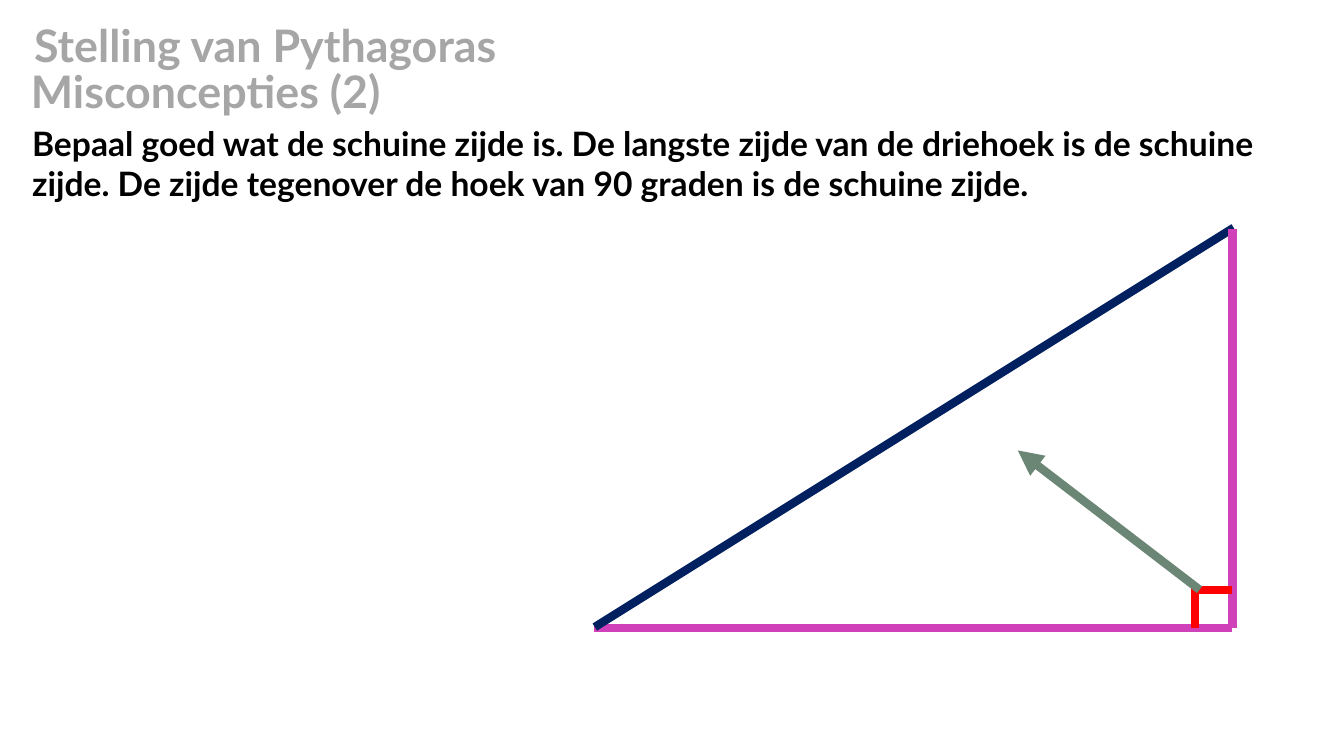
from lxml import etree
from pptx import Presentation
from pptx import util as u
from pptx.dml.color import RGBColor
from pptx.enum import shapes, text
from pptx.oxml.ns import qn

THEME = {
    "font": "Lato",
    "title_size": 32,
    "body_size": 24,
    "line_width": 6,
    "title": "A6A6A6",
    "body": "000000",
    "leg": "D040B9",
    "hypotenuse": "002060",
    "right_angle": "FF0000",
    "pointer": "6B8674",
}

TITLES = [
    ("Stelling van Pythagoras", (0.61, 0.33, 17.98, 1.63)),
    ("Misconcepties (2)", (0.53, 1.47, 17.98, 1.63)),
]
EXPLANATION = (
    "Bepaal goed wat de schuine zijde is. De langste zijde van de driehoek is de schuine zijde. "
    "De zijde tegenover de hoek van 90 graden is de schuine zijde.",
    (0.56, 2.97, 32.69, 2.31),
)

LEFT, RIGHT, TOP, BOTTOM = 14.96, 31.06, 5.77, 15.82
MARK_LEFT, MARK_TOP = 30.12, 14.86
LINES = [
    ("leg", (RIGHT, BOTTOM), (LEFT, BOTTOM), False),
    ("hypotenuse", (RIGHT + 0.03, TOP - 0.03), (LEFT + 0.03, BOTTOM - 0.02), False),
    ("leg", (RIGHT, BOTTOM), (RIGHT, TOP), False),
    ("right_angle", (MARK_LEFT, BOTTOM), (MARK_LEFT, MARK_TOP), False),
    ("right_angle", (RIGHT - 0.02, MARK_TOP), (MARK_LEFT - 0.1, MARK_TOP), False),
    ("pointer", (MARK_LEFT + 0.11, MARK_TOP), (25.65, 11.35), True),
]


def add_text(slide, content, box, size, color):
    shape = slide.shapes.add_textbox(*map(u.Cm, box))
    frame = shape.text_frame
    frame.word_wrap = True
    frame.auto_size = text.MSO_AUTO_SIZE.SHAPE_TO_FIT_TEXT
    run = frame.paragraphs[0].add_run()
    run.text = content
    run.font.name = THEME["font"]
    run.font.size = u.Pt(size)
    run.font.bold = True
    run.font.color.rgb = RGBColor.from_string(color)


def add_line(slide, start, end, color, arrow):
    connector = slide.shapes.add_connector(
        shapes.MSO_CONNECTOR.STRAIGHT, *map(u.Cm, start + end)
    )
    connector.line.width = u.Pt(THEME["line_width"])
    connector.line.color.rgb = RGBColor.from_string(color)
    if arrow:
        outline = connector.line._get_or_add_ln()
        etree.SubElement(outline, qn("a:tailEnd"), type="triangle")
    etree.SubElement(connector._element.spPr, qn("a:effectLst"))


def main():
    presentation = Presentation()
    presentation.slide_width = u.Cm(33.87)
    presentation.slide_height = u.Cm(19.05)
    slide = presentation.slides.add_slide(presentation.slide_layouts[6])

    for content, box in TITLES:
        add_text(slide, content, box, size=THEME["title_size"], color=THEME["title"])
    add_text(slide, *EXPLANATION, size=THEME["body_size"], color=THEME["body"])
    for role, start, end, arrow in LINES:
        add_line(slide, start, end, color=THEME[role], arrow=arrow)

    presentation.save("out.pptx")


if __name__ == "__main__":
    main()
